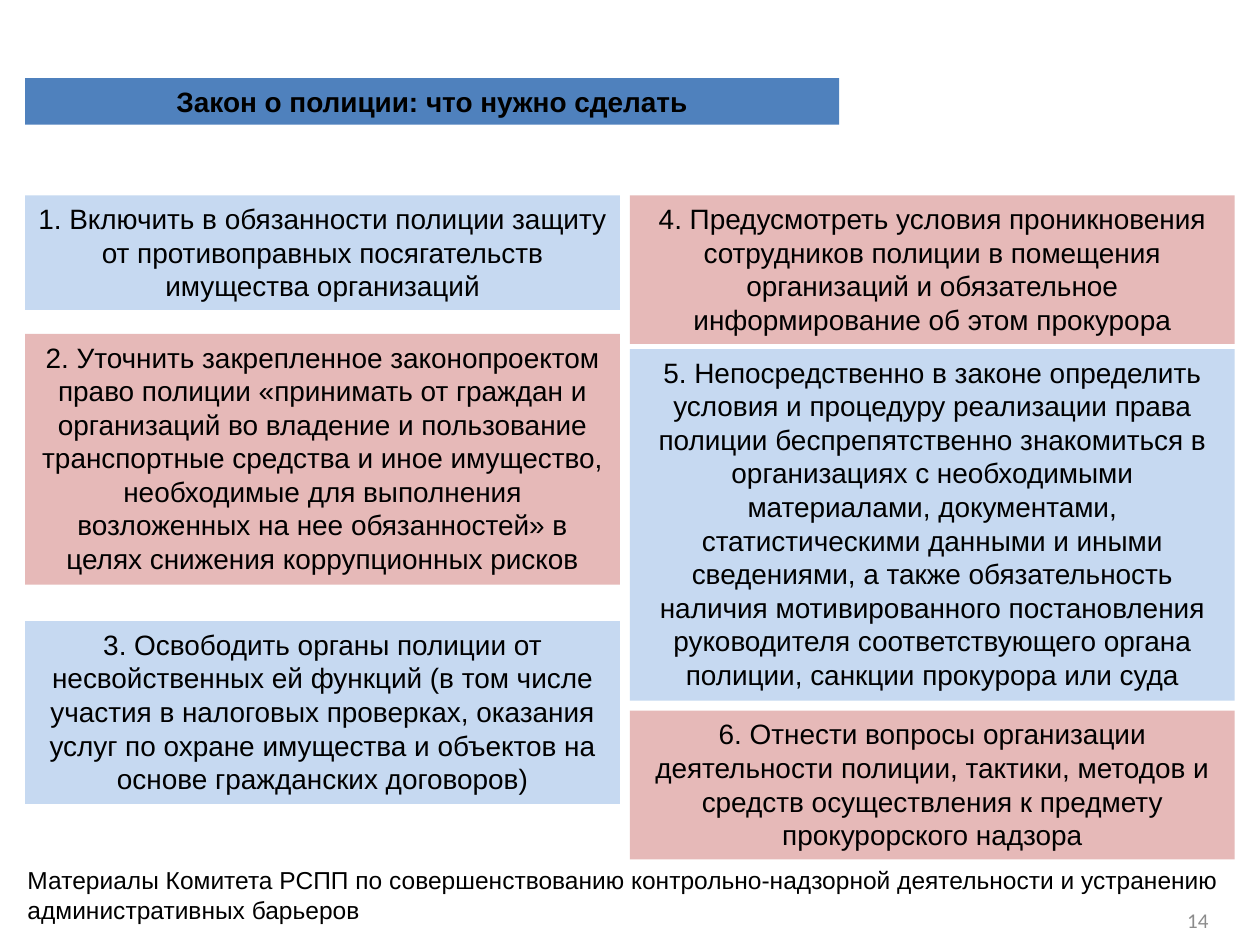
from pptx import Presentation
from pptx.dml.color import RGBColor
from pptx.enum.text import MSO_ANCHOR, MSO_AUTO_SIZE, PP_ALIGN
from pptx.util import Inches, Pt

LEFT, CENTER, RIGHT = PP_ALIGN.LEFT, PP_ALIGN.CENTER, PP_ALIGN.RIGHT
TOP, MIDDLE = MSO_ANCHOR.TOP, MSO_ANCHOR.MIDDLE
FIT_SHAPE, NO_FIT = MSO_AUTO_SIZE.SHAPE_TO_FIT_TEXT, MSO_AUTO_SIZE.NONE

TITLE = "Закон о полиции: что нужно сделать"
SOURCE = ("Материалы Комитета РСПП по совершенствованию контрольно-надзорной "
          "деятельности и устранению административных барьеров")
PAGE_NUMBER = "14"
BLACK, GRAY, TITLE_BLUE = "000000", "8C8C8C", "4F81BD"
CARD_FILLS = ("C6D9F1", "E6B9B8")

COLUMNS = [
    (0.2, 4.72, [
        (1.55, 0.91, "Включить в обязанности полиции защиту от противоправных "
                     "посягательств имущества организаций"),
        (2.65, 1.99, "Уточнить закрепленное законопроектом право полиции «принимать "
                     "от граждан и организаций во владение и пользование транспортные "
                     "средства и иное имущество, необходимые для выполнения возложенных "
                     "на нее обязанностей» в целях снижения коррупционных рисков"),
        (4.93, 1.45, "Освободить органы полиции от несвойственных ей функций (в том "
                     "числе участия в налоговых проверках, оказания услуг по охране "
                     "имущества и объектов на основе гражданских договоров)"),
    ]),
    (5, 4.8, [
        (1.55, 1.18, "Предусмотреть условия проникновения сотрудников полиции в "
                     "помещения организаций и обязательное информирование об этом "
                     "прокурора"),
        (2.77, 2.79, "Непосредственно в законе определить условия и процедуру "
                     "реализации права полиции беспрепятственно знакомиться в "
                     "организациях с необходимыми материалами, документами, "
                     "статистическими данными и иными сведениями, а также "
                     "обязательность наличия мотивированного постановления "
                     "руководителя соответствующего органа полиции, санкции "
                     "прокурора или суда"),
        (5.64, 1.18, "Отнести вопросы организации деятельности полиции, тактики, "
                     "методов и средств осуществления к предмету прокурорского "
                     "надзора"),
    ]),
]


def color(value):
    return RGBColor.from_string(value)


def add_text(page, text, area, size=16, align=CENTER, fill=None, bold=False,
             font="Arial", ink=BLACK, anchor=TOP, fit=FIT_SHAPE):
    box = page.shapes.add_textbox(*map(Inches, area))
    if fill:
        box.fill.solid()
        box.fill.fore_color.rgb = color(fill)
    frame = box.text_frame
    frame.word_wrap = True
    frame.auto_size = fit
    frame.vertical_anchor = anchor
    para = frame.paragraphs[0]
    para.text = text
    para.alignment = align
    para.font.name = font
    para.font.size = Pt(size)
    para.font.bold = bold
    para.font.color.rgb = color(ink)


deck = Presentation()
deck.slide_width, deck.slide_height = Inches(10), Inches(7.5)
page = deck.slides.add_slide(deck.slide_layouts[6])

add_text(page, TITLE, (0.2, 0.62, 6.46, 0.37), fill=TITLE_BLUE, bold=True)

number = 0
for left, width, cards in COLUMNS:
    for top, height, text in cards:
        add_text(page, f"{number + 1}. {text}", (left, top, width, height),
                 fill=CARD_FILLS[number % 2])
        number += 1

add_text(page, PAGE_NUMBER, (7.36, 7.1, 2.33, 0.4), size=12, align=RIGHT,
         font="Calibri", ink=GRAY, anchor=MIDDLE, fit=NO_FIT)
add_text(page, SOURCE, (0.12, 6.82, 9.8, 0.57), size=14, align=LEFT)

deck.save("out.pptx")
